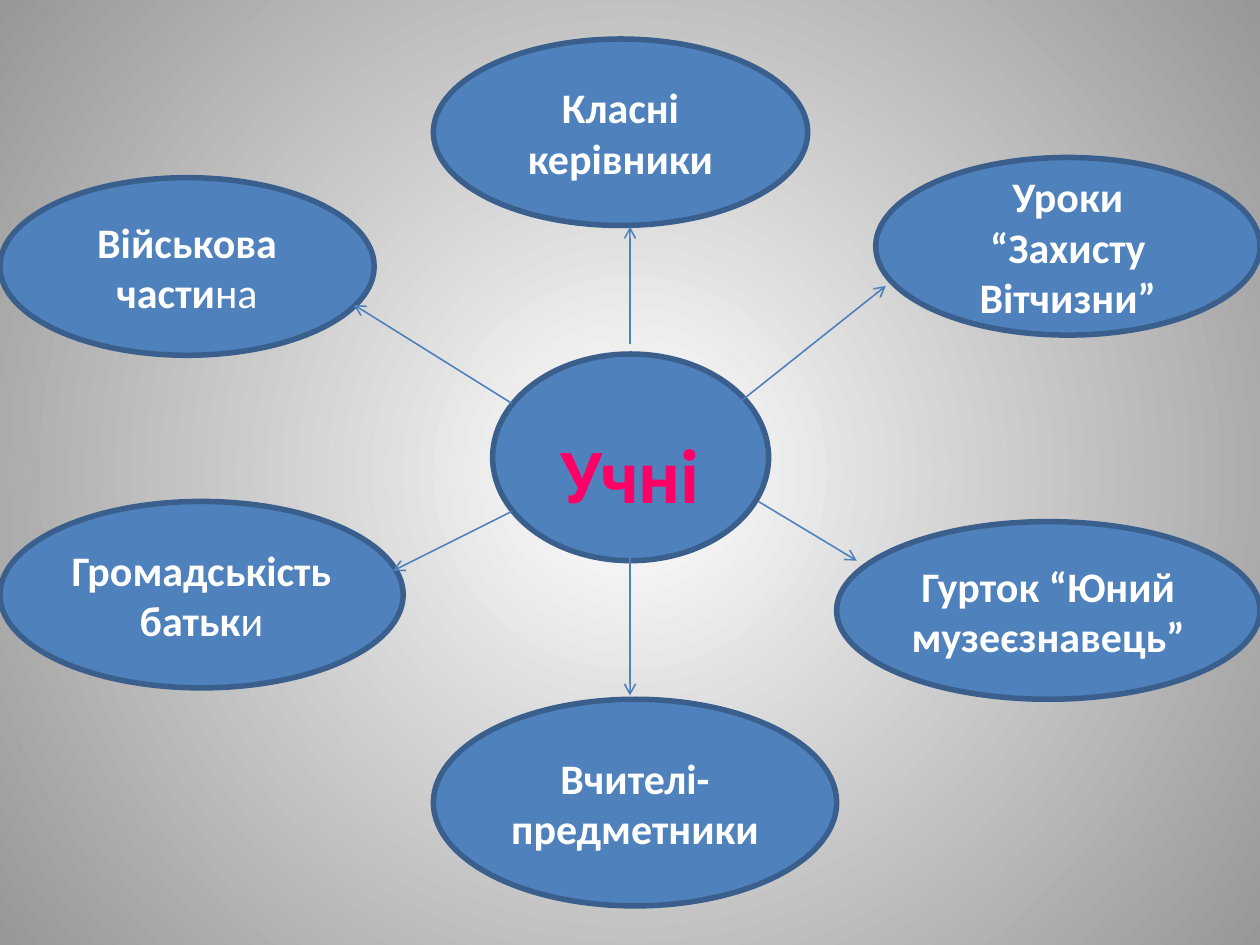
from lxml import etree
from pptx import Presentation
from pptx.dml.color import RGBColor
from pptx.enum.shapes import MSO_CONNECTOR, MSO_SHAPE
from pptx.enum.text import MSO_ANCHOR, PP_ALIGN
from pptx.oxml import parse_xml
from pptx.oxml.ns import nsdecls, qn
from pptx.util import Inches, Pt

WHITE = RGBColor(0xFF, 0xFF, 0xFF)
GRAY = RGBColor(0x97, 0x97, 0x97)
BLUE = RGBColor(0x4F, 0x81, 0xBD)
NAVY = RGBColor(0x3A, 0x5F, 0x8C)
PINK = RGBColor(0xFF, 0x00, 0x66)

prs = Presentation()
prs.slide_width = Inches(10)
prs.slide_height = Inches(7.5)
slide = prs.slides.add_slide(prs.slide_layouts[6])
shapes = slide.shapes


def style(run, size, color, bold=True):
    run.font.name = "Calibri"
    run.font.size = Pt(size)
    run.font.bold = bold
    run.font.color.rgb = color


# Radial background, white in the middle
fill = slide.background.fill
fill.gradient()
for stop, color in zip(fill.gradient_stops, (WHITE, GRAY)):
    stop.color.rgb = color
fill.gradient_stops[0].position = 0
fill.gradient_stops[1].position = 1
lin = slide.background._cSld.find(".//" + qn("a:lin"))
lin.getparent().replace(lin, parse_xml(
    f'<a:path {nsdecls("a")} path="circle">'
    '<a:fillToRect l="50000" t="50000" r="50000" b="50000"/></a:path>'))

# Ovals: place, then lines of text as (bold part, plain ending)
ovals = [
    ((6.64, 4.14, 3.36, 1.41), [("Гурток “Юний музеєзнавець”", "")]),
    ((6.95, 1.25, 3.05, 1.41), [("Уроки “Захисту Вітчизни”", "")]),
    ((0, 3.98, 3.2, 1.48), [("Громадськість", ""), ("батьк", "и")]),
    ((0, 1.41, 2.97, 1.41), [("Військова части", "на")]),
    ((3.44, 5.55, 3.2, 1.64), [("Вчителі-предметники", "")]),
    ((3.44, 0.31, 2.97, 1.48), [("Класні керівники", "")]),
    ((3.91, 2.81, 2.19, 1.64), []),
]
for place, lines in ovals:
    oval = shapes.add_shape(MSO_SHAPE.OVAL, *map(Inches, place))
    oval.shadow.inherit = False
    oval.fill.solid()
    oval.fill.fore_color.rgb = BLUE
    oval.line.color.rgb = NAVY
    oval.line.width = Pt(3.15)
    frame = oval.text_frame
    frame.word_wrap = True
    frame.vertical_anchor = MSO_ANCHOR.MIDDLE
    frame.text = "\n".join(bold for bold, plain in lines)
    for para, (bold, plain) in zip(frame.paragraphs, lines):
        para.alignment = PP_ALIGN.CENTER
        style(para.runs[0], 24, WHITE)
        if plain:
            end = para.add_run()
            end.text = plain
            style(end, 24, WHITE, False)

# Central title
title = shapes.add_textbox(0, 0, prs.slide_width, prs.slide_height)
frame = title.text_frame
frame.word_wrap = True
frame.vertical_anchor = MSO_ANCHOR.MIDDLE
frame.text = "Учні"
frame.paragraphs[0].alignment = PP_ALIGN.CENTER
style(frame.paragraphs[0].runs[0], 44, PINK)

# Arrows from the centre outwards
arrows = [
    (5, 2.73, 5, 1.8),
    (5, 4.38, 5, 5.52),
    (6.02, 3.98, 6.8, 4.45),
    (5.86, 3.2, 7.03, 2.27),
    (4.06, 3.2, 2.81, 2.42),
    (4.06, 4.06, 3.12, 4.53),
]
for ends in arrows:
    arrow = shapes.add_connector(MSO_CONNECTOR.STRAIGHT, *map(Inches, ends))
    arrow.line.color.rgb = BLUE
    arrow.line.width = Pt(0.9)
    etree.SubElement(arrow.line._get_or_add_ln(), qn("a:tailEnd"), type="arrow")
    etree.SubElement(arrow._element.spPr, qn("a:effectLst"))

prs.save("out.pptx")
